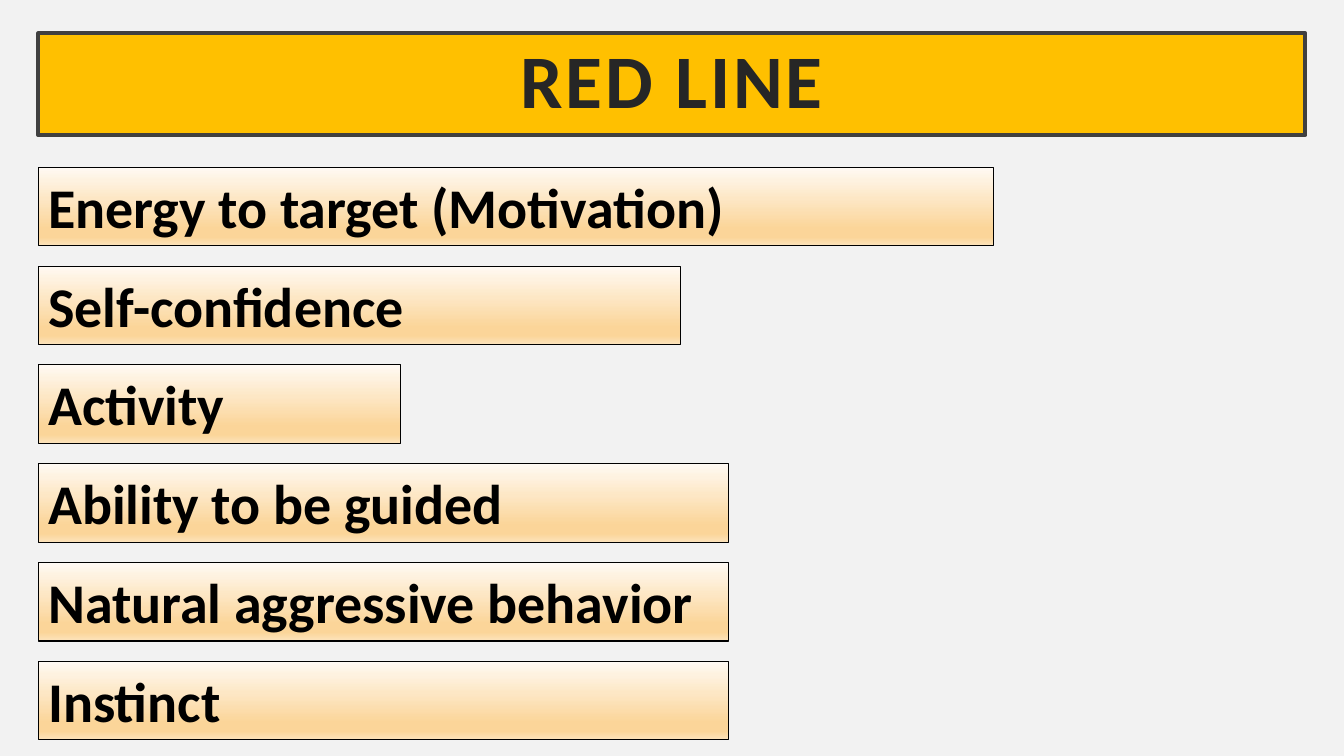
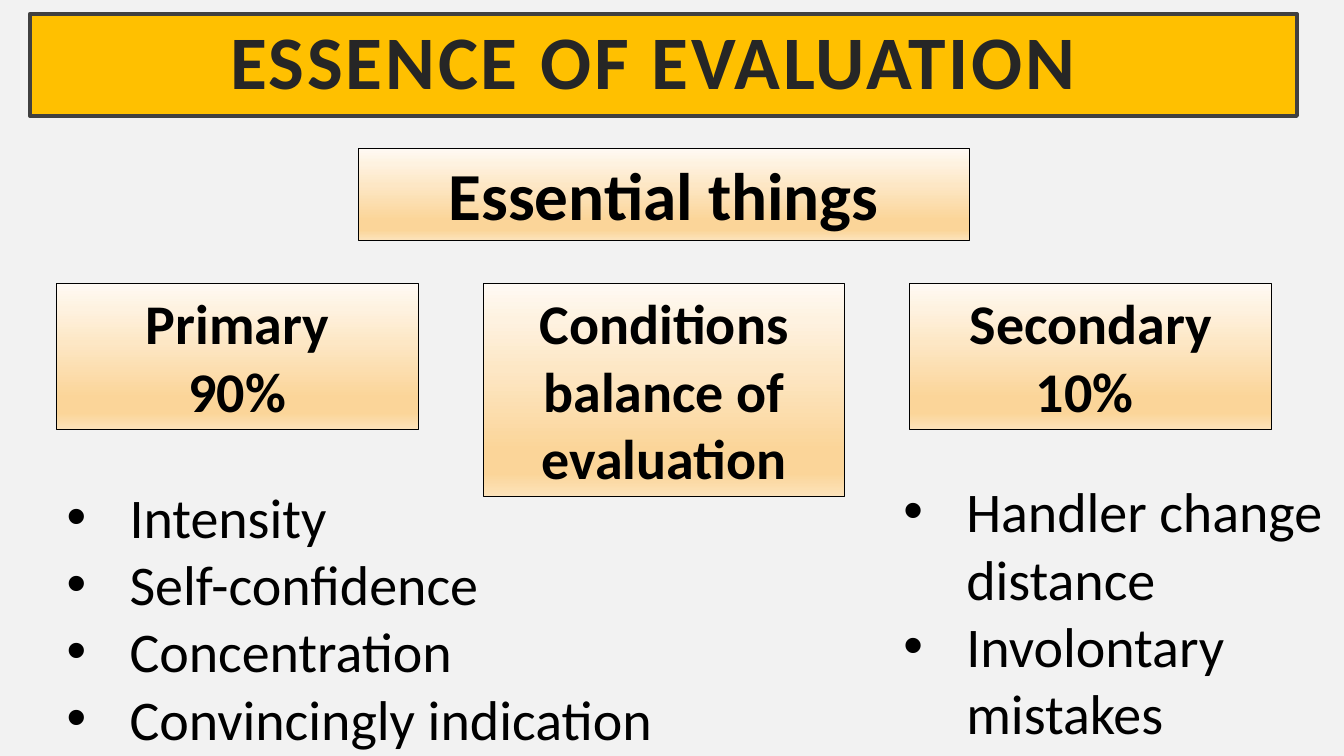
from dataclasses import dataclass

from lxml import etree
from pptx import Presentation
from pptx.dml.color import RGBColor
from pptx.enum.shapes import MSO_SHAPE
from pptx.enum.text import MSO_ANCHOR, MSO_AUTO_SIZE, PP_ALIGN
from pptx.oxml.ns import qn
from pptx.util import Pt

RECTANGLE = MSO_SHAPE.RECTANGLE
TOP, MIDDLE = MSO_ANCHOR.TOP, MSO_ANCHOR.MIDDLE
FIXED_SIZE = MSO_AUTO_SIZE.NONE
LEFT, CENTER = PP_ALIGN.LEFT, PP_ALIGN.CENTER
TITLE_ONLY, TWO_CONTENT = 5, 3


@dataclass(frozen=True)
class Theme:
    font: str = "Calibri"
    background: str = "F2F2F2"
    title_fill: str = "FFC000"
    title_line: str = "404040"
    title_text: str = "262626"
    text: str = "000000"
    gradient: tuple = (
        (0, "FFFAF4"), (17, "FEF2E0"), (40, "FDE7C5"),
        (78, "FBD599"), (89, "FBD599"), (100, "FCE3BB"),
    )
    title_size: int = 54
    heading_size: int = 48
    text_size: int = 40


THEME = Theme()


def color(value):
    return RGBColor.from_string(value)


def place(shape, left, top, width, height):
    shape.left, shape.top = Pt(left), Pt(top)
    shape.width, shape.height = Pt(width), Pt(height)


def outline(shape, value, weight):
    shape.line.color.rgb = color(value)
    shape.line.width = Pt(weight)


def write(frame, texts, size, value, bold, align):
    frame.word_wrap = True
    frame.auto_size = FIXED_SIZE
    for index, text in enumerate(texts):
        para = frame.paragraphs[0] if index == 0 else frame.add_paragraph()
        para.text = text
        para.alignment = align
        para.space_before = Pt(0)
        for span in para.runs:
            span.font.name = THEME.font
            span.font.size = Pt(size)
            span.font.bold = bold
            span.font.color.rgb = color(value)


def fill_gradient(shape):
    shape.fill.gradient()
    shape.fill.gradient_angle = 270
    stops = shape._element.spPr.find(qn("a:gradFill")).find(qn("a:gsLst"))
    for stop in list(stops):
        stops.remove(stop)
    for position, value in THEME.gradient:
        stop = etree.SubElement(stops, qn("a:gs"), pos=str(position * 1000))
        etree.SubElement(stop, qn("a:srgbClr"), val=value)


def add_page(deck, layout, title, left, top):
    page = deck.slides.add_slide(deck.slide_layouts[layout])
    banner = page.shapes.title
    place(banner, left, top, 905, 72.7)
    banner.fill.solid()
    banner.fill.fore_color.rgb = color(THEME.title_fill)
    outline(banner, THEME.title_line, 3)
    frame = banner.text_frame
    write(frame, [title], THEME.title_size, THEME.title_text, True, CENTER)
    frame.vertical_anchor = MIDDLE
    frame.margin_left = frame.margin_right = Pt(21.6)
    frame.margin_top = frame.margin_bottom = Pt(14.4)
    para = frame.paragraphs[0]
    para.line_spacing = 0.9
    for span in para.runs:
        span.font._element.set("spc", "200")
    return page


def add_box(page, texts, left, top, width, size=THEME.text_size, align=CENTER):
    line_count = sum(len(text.splitlines()) for text in texts)
    height = line_count * size * 1.2 + 8
    box = page.shapes.add_shape(RECTANGLE, Pt(left), Pt(top), Pt(width), Pt(height))
    box.shadow.inherit = False
    fill_gradient(box)
    outline(box, THEME.text, 0.75)
    write(box.text_frame, texts, size, THEME.text, True, align)
    box.text_frame.vertical_anchor = TOP


def fill_list(body, items, left, top, width, height):
    place(body, left, top, width, height)
    write(body.text_frame, items, THEME.text_size, THEME.text, False, LEFT)
    indent = Pt(45)
    for para in body.text_frame.paragraphs:
        properties = para._p.get_or_add_pPr()
        properties.set("marL", str(indent))
        properties.set("indent", str(-indent))


def build_red_line(deck):
    page = add_page(deck, TITLE_ONLY, "RED LINE", 27.4, 23.8)
    traits = (
        ("Energy to target (Motivation)", 682),
        ("Self-confidence", 458.5),
        ("Activity", 258.5),
        ("Ability to be guided", 493),
        ("Natural aggressive behavior", 493),
        ("Instinct", 493),
    )
    for row, (trait, width) in enumerate(traits):
        add_box(page, [trait], 27.4, 119.5 + row * 70.6, width, align=LEFT)


def build_evaluation(deck):
    page = add_page(deck, TWO_CONTENT, "ESSENCE OF EVALUATION ", 21.4, 10)
    add_box(page, ["Essential things"], 256, 106, 436.5, THEME.heading_size)
    columns = (
        ["Primary", "90%"],
        ["Conditions\nbalance of\nevaluation"],
        ["Secondary", "10% "],
    )
    for column, texts in enumerate(columns):
        add_box(page, texts, 40.3 + column * 304.8, 202.8, 258.5)
    primary, secondary = page.placeholders[1], page.placeholders[2]
    fill_list(
        primary,
        ["Intensity", "Self-confidence", "Concentration", "Convincingly indication"],
        40.3, 341, 437, 199,
    )
    fill_list(
        secondary,
        ["Handler change\ndistance", "Involontary\nmistakes"],
        638, 337, 322, 201,
    )


def main():
    deck = Presentation()
    deck.slide_width, deck.slide_height = Pt(960), Pt(540)
    backdrop = deck.slide_master.background.fill
    backdrop.solid()
    backdrop.fore_color.rgb = color(THEME.background)
    build_red_line(deck)
    build_evaluation(deck)
    deck.save("out.pptx")


if __name__ == "__main__":
    main()
